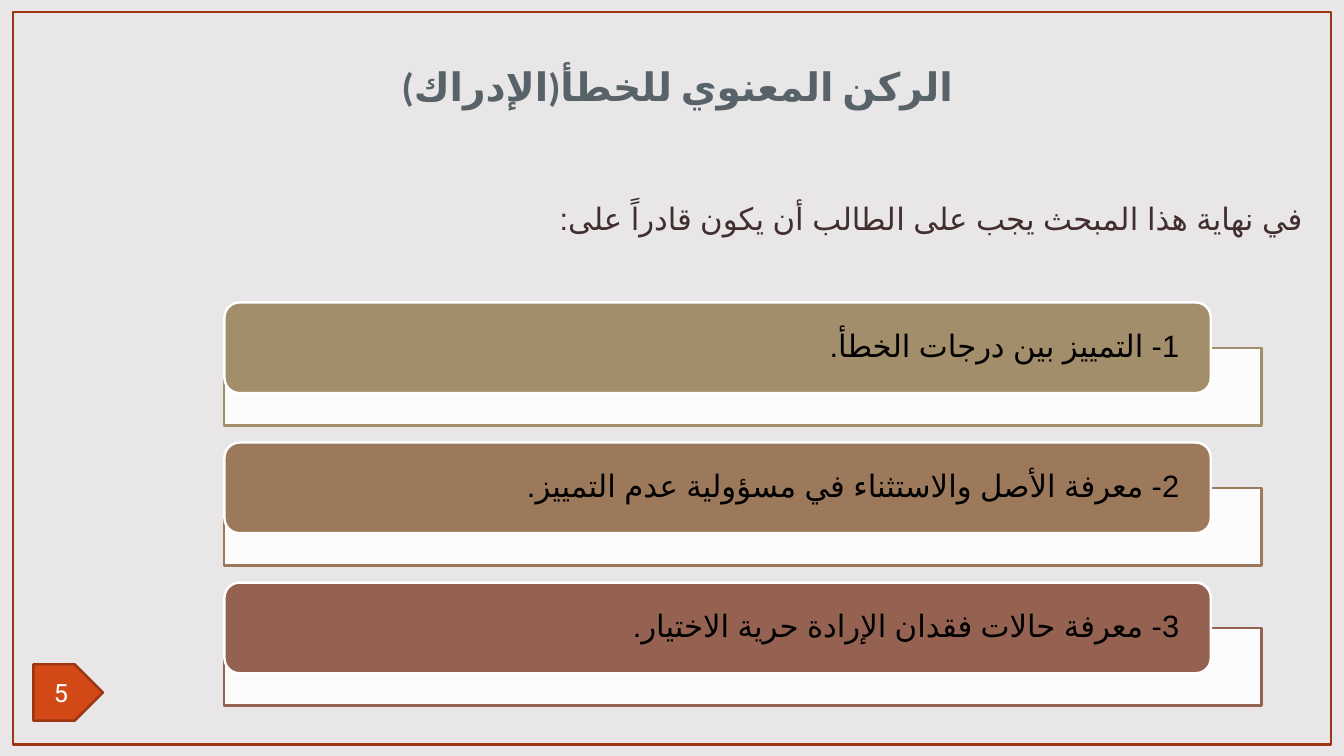
import pptx
import pptx.util
import pptx.dml.color
import pptx.enum.lang
import pptx.enum.shapes
import pptx.enum.text
import pptx.oxml.ns
import lxml.etree

Pt = pptx.util.Pt
SHAPES = pptx.enum.shapes.MSO_SHAPE
ALIGN = pptx.enum.text.PP_ALIGN
ANCHOR = pptx.enum.text.MSO_ANCHOR
ARABIC = pptx.enum.lang.MSO_LANGUAGE_ID.ARABIC
qn = pptx.oxml.ns.qn

# Content
TITLE = "الركن المعنوي للخطأ(الإدراك)"
INTRO = "في نهاية هذا المبحث يجب على الطالب أن يكون قادراً على:"
GOALS = [
    ("1- التمييز بين درجات الخطأ.", "sand"),
    ("2- معرفة الأصل والاستثناء في مسؤولية عدم التمييز.", "tan"),
    ("3- معرفة حالات فقدان الإرادة حرية الاختيار.", "clay"),
]
PAGE_NUMBER = "5"

COLORS = {
    "background": "E9E6E7", "frame": "9C3511", "badge": "D34817",
    "title": "576368", "intro": "422E2E", "white": "FFFFFF", "black": "000000",
    "sand": "A28E6A", "tan": "9D795C", "clay": "956251",
}

# Layout in points
SLIDE_SIZE = (960, 540)
FRAME_BOX = (9.3, 8.6, 941.6, 523.1)
BADGE_BOX = (23.8, 474.5, 49.7, 40.3)
TITLE_BOX = (213.1, 22.3, 541.4, 74.2)
INTRO_BOX = (22.3, 126, 915.1, 398.2)
LINE_WIDTH = 1.75
GOAL_TOP, GOAL_PITCH = 216, 100.08
PANEL_LEFT, PANEL_DROP, PANEL_WIDTH, PANEL_HEIGHT = 160.1, 32.6, 740.9, 55.4
BAR_LEFT, BAR_WIDTH, BAR_HEIGHT = 160.3, 704.6, 64.8
LABEL_INSET, LABEL_MARGIN = 3.1, 19.4


def color(name):
    return pptx.dml.color.RGBColor.from_string(COLORS[name])


def add_box(slide, kind, box, fill=None, line=None):
    shape = slide.shapes.add_shape(kind, *map(Pt, box))
    shape.shadow.inherit = False
    if fill:
        shape.fill.solid()
        shape.fill.fore_color.rgb = color(fill)
    else:
        shape.fill.background()
    if line:
        shape.line.color.rgb = color(line)
        shape.line.width = Pt(LINE_WIDTH)
    else:
        shape.line.fill.background()
    return shape


def write(shape, text, size, font_name, font_color, align, anchor=ANCHOR.MIDDLE,
          spacing=1.0, bold=False, right_to_left=True):
    frame = shape.text_frame
    frame.word_wrap = True
    frame.vertical_anchor = anchor
    paragraph = frame.paragraphs[0]
    paragraph.text = text
    paragraph.alignment = align
    paragraph.line_spacing = spacing
    font = paragraph.font
    font.size = Pt(size)
    font.name = font_name
    font.bold = bold
    font.color.rgb = color(font_color)
    if right_to_left:
        font.language_id = ARABIC
        paragraph.runs[0].font.language_id = ARABIC
        properties = paragraph._p.get_or_add_pPr()
        properties.set("rtl", "1")
        script_font = lxml.etree.SubElement(properties.find(qn("a:defRPr")), qn("a:cs"))
        script_font.set("typeface", font_name)


def add_text(slide, box, *style, margin=None, **options):
    shape = slide.shapes.add_textbox(*map(Pt, box))
    if margin is not None:
        frame = shape.text_frame
        frame.margin_left = frame.margin_right = Pt(margin)
        frame.margin_top = frame.margin_bottom = 0
    write(shape, *style, **options)


def add_goal(slide, index, text, accent):
    top = GOAL_TOP + index * GOAL_PITCH
    panel = add_box(slide, SHAPES.RECTANGLE,
                    (PANEL_LEFT, top + PANEL_DROP, PANEL_WIDTH, PANEL_HEIGHT),
                    "white", accent)
    panel_color = panel.fill._xPr.find(qn("a:solidFill"))[0]
    lxml.etree.SubElement(panel_color, qn("a:alpha")).set("val", "90000")
    add_box(slide, SHAPES.ROUNDED_RECTANGLE,
            (BAR_LEFT, top, BAR_WIDTH, BAR_HEIGHT), accent, "white")
    label_box = (BAR_LEFT + LABEL_INSET, top + LABEL_INSET,
                 BAR_WIDTH - 2 * LABEL_INSET, BAR_HEIGHT - 2 * LABEL_INSET)
    add_text(slide, label_box, text, 22, "Arial", "black", ALIGN.RIGHT,
             spacing=0.9, margin=LABEL_MARGIN)


def main():
    presentation = pptx.Presentation()
    presentation.slide_width, presentation.slide_height = map(Pt, SLIDE_SIZE)
    slide = presentation.slides.add_slide(presentation.slide_layouts[6])

    # Background, frame and page number
    slide.background.fill.solid()
    slide.background.fill.fore_color.rgb = color("background")
    add_box(slide, SHAPES.RECTANGLE, FRAME_BOX, line="frame")
    badge = add_box(slide, SHAPES.PENTAGON, BADGE_BOX, "badge", "frame")
    write(badge, PAGE_NUMBER, 18, "Roboto", "white", ALIGN.CENTER, right_to_left=False)

    # Title and introduction
    add_text(slide, TITLE_BOX, TITLE, 28, "Calibri", "title", ALIGN.CENTER,
             spacing=1.1, bold=True)
    add_text(slide, INTRO_BOX, INTRO, 22, "Arial", "intro", ALIGN.JUSTIFY,
             anchor=ANCHOR.TOP, spacing=1.5)

    # Learning goals
    for index, (text, accent) in enumerate(GOALS):
        add_goal(slide, index, text, accent)

    presentation.save("out.pptx")


if __name__ == "__main__":
    main()
